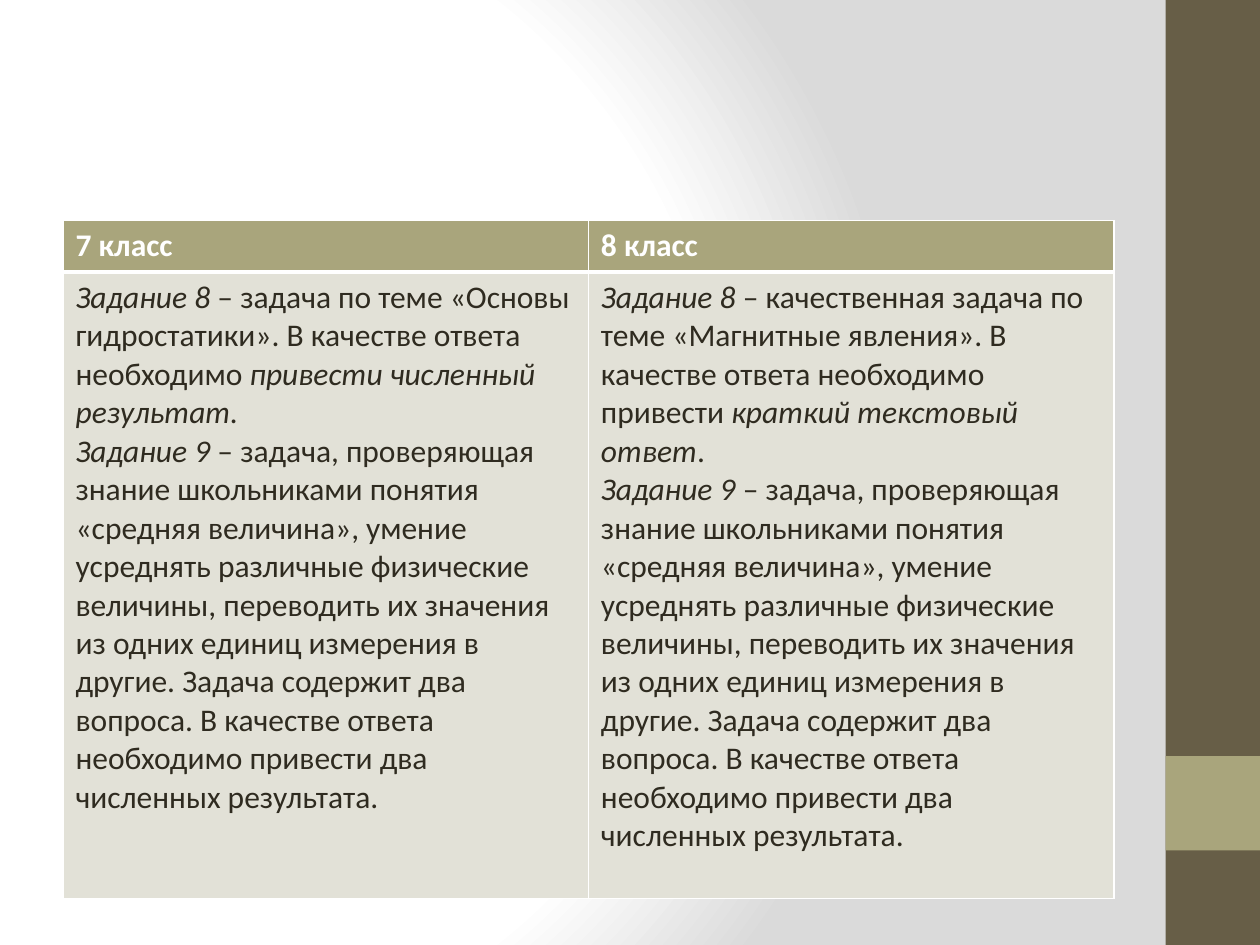
"""Build a slide comparing tasks 8 and 9 for the 7th and 8th grades."""
from pptx import Presentation, util as u
from pptx.dml.color import RGBColor
from pptx.enum import shapes
from pptx.oxml import parse_xml
from pptx.oxml.ns import nsdecls


def color(value):
    return RGBColor.from_string(value)


def write(para, spans, **formats):
    for wording, italic in spans:
        span = para.add_run()
        span.text = wording
        values = {"name": "Calibri", "size": u.Pt(18), "italic": italic, **formats}
        shade = values.pop("shade")
        for name, value in values.items():
            setattr(span.font, name, value)
        span.font.color.rgb = color(shade)


OLIVE, BROWN, PALE, INK, WHITE = "A9A57C", "675E47", "E2E1D7", "2F2B20", "FFFFFF"
average_task = [
    ("Задание 9", True),
    (" – задача, проверяющая знание школьниками понятия «средняя величина», "
     "умение усреднять различные физические величины, переводить их значения "
     "из одних единиц измерения в другие. Задача содержит два вопроса. "
     "В качестве ответа необходимо привести два численных результата.", False),
]
grades = {
    "7 класс": [
        ("Задание 8", True),
        (" – задача по теме «Основы гидростатики». "
         "В качестве ответа необходимо ", False),
        ("привести численный результат.", True),
    ],
    "8 класс": [
        ("Задание 8", True),
        (" – качественная задача по теме «Магнитные явления». "
         "В качестве ответа необходимо привести ", False),
        ("краткий текстовый ответ", True),
        (".", False),
    ],
}

deck = Presentation()
deck.slide_width, deck.slide_height = u.Inches(10), u.Inches(7.5)
page = deck.slides.add_slide(deck.slide_layouts[6])

page.background.fill.gradient()
gradient = page.element.xpath(".//p:bgPr/a:gradFill")[0]
stops = "".join(
    f'<a:gs pos="{position * 1000}"><a:srgbClr val="{shade}"/></a:gs>'
    for position, shade in [(0, WHITE), (75, WHITE), (100, "DADADA")]
)
gradient.getparent().replace(gradient, parse_xml(
    f'<a:gradFill {nsdecls("a")} rotWithShape="1"><a:gsLst>{stops}</a:gsLst>'
    '<a:path path="circle"><a:fillToRect l="20000" t="50000" r="100000" b="50000"/>'
    '</a:path></a:gradFill>'
))

for top, height, shade in [(0, 7.5, BROWN), (6, 0.75, OLIVE)]:
    band = page.shapes.add_shape(
        shapes.MSO_SHAPE.RECTANGLE,
        u.Inches(9.25), u.Inches(top), u.Inches(0.75), u.Inches(height),
    )
    band.shadow.inherit = False
    band.fill.solid()
    band.fill.fore_color.rgb = color(shade)
    band.line.fill.background()

table = page.shapes.add_table(
    2, 2, u.Inches(0.5), u.Inches(1.75), u.Inches(8.33), u.Inches(5.38)
).table
table.rows[0].height, table.rows[1].height = u.Inches(0.41), u.Inches(4.97)

for column, (grade, first_task) in enumerate(grades.items()):
    table.columns[column].width = u.Inches(4.17)
    header, body = table.cell(0, column), table.cell(1, column)
    write(header.text_frame.paragraphs[0], [(grade, False)], bold=True, shade=WHITE)
    write(body.text_frame.paragraphs[0], first_task, bold=False, shade=INK)
    write(body.text_frame.add_paragraph(), average_task, bold=False, shade=INK)

    for cell, shade, widths in [
        (header, OLIVE, {"L": 1, "R": 1, "T": 1, "B": 3}),
        (body, PALE, {"L": 1, "R": 1, "T": 3, "B": 1}),
    ]:
        properties = cell._tc.get_or_add_tcPr()
        for side, width in widths.items():
            properties.append(parse_xml(
                f'<a:ln{side} {nsdecls("a")} w="{u.Pt(width)}"><a:solidFill>'
                f'<a:srgbClr val="{WHITE}"/></a:solidFill></a:ln{side}>'
            ))
        cell.fill.solid()
        cell.fill.fore_color.rgb = color(shade)

deck.save("out.pptx")
